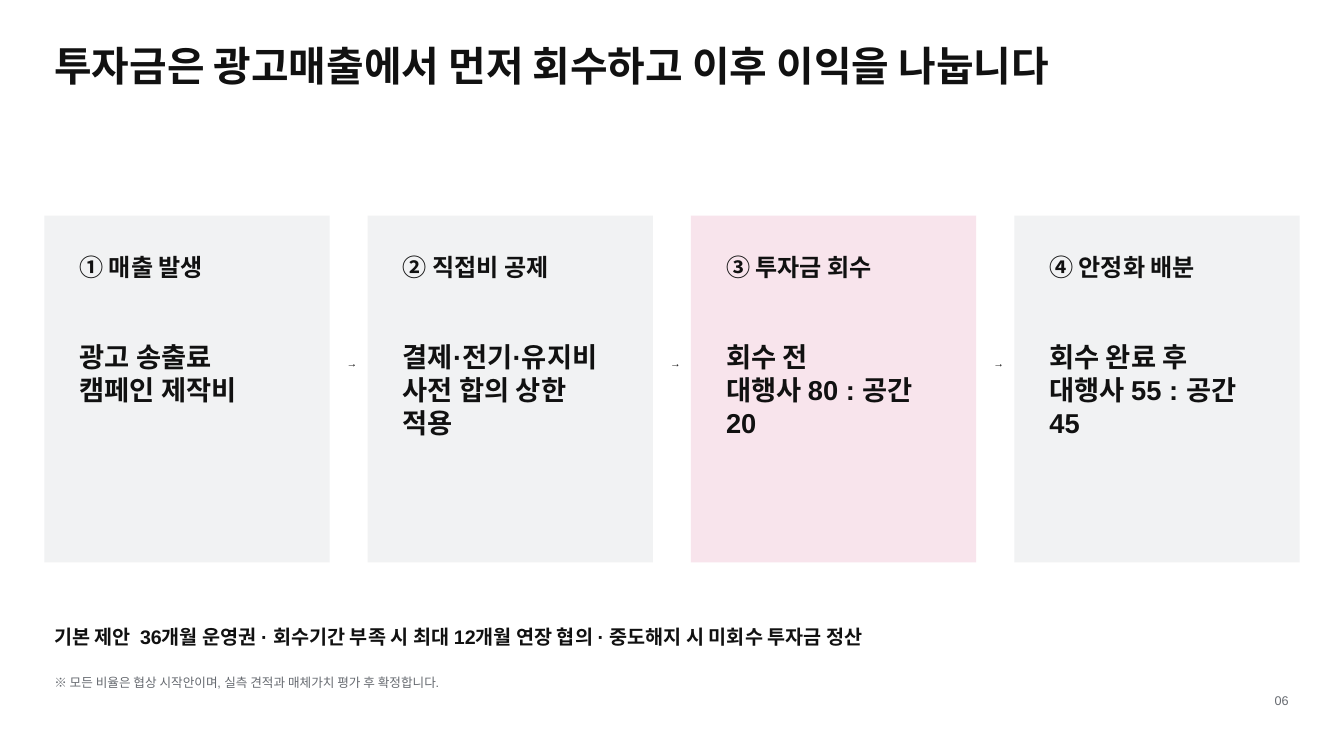
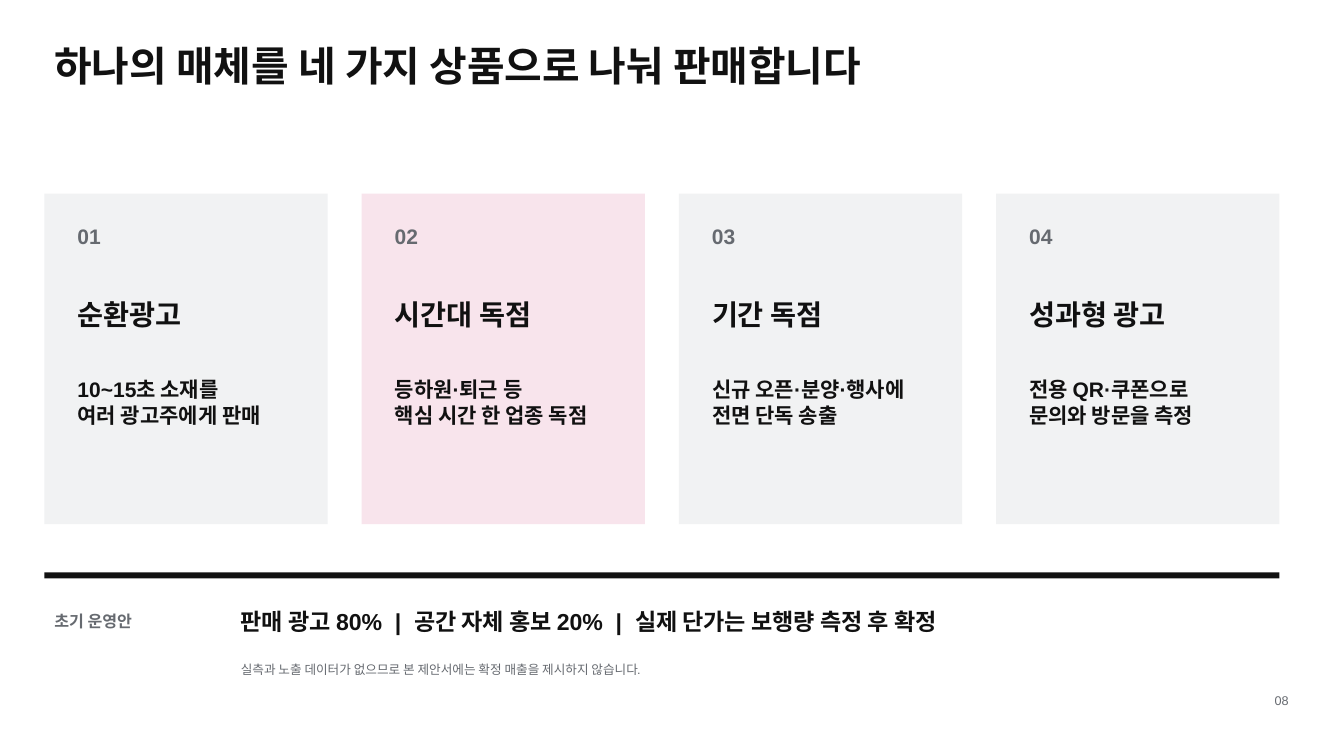
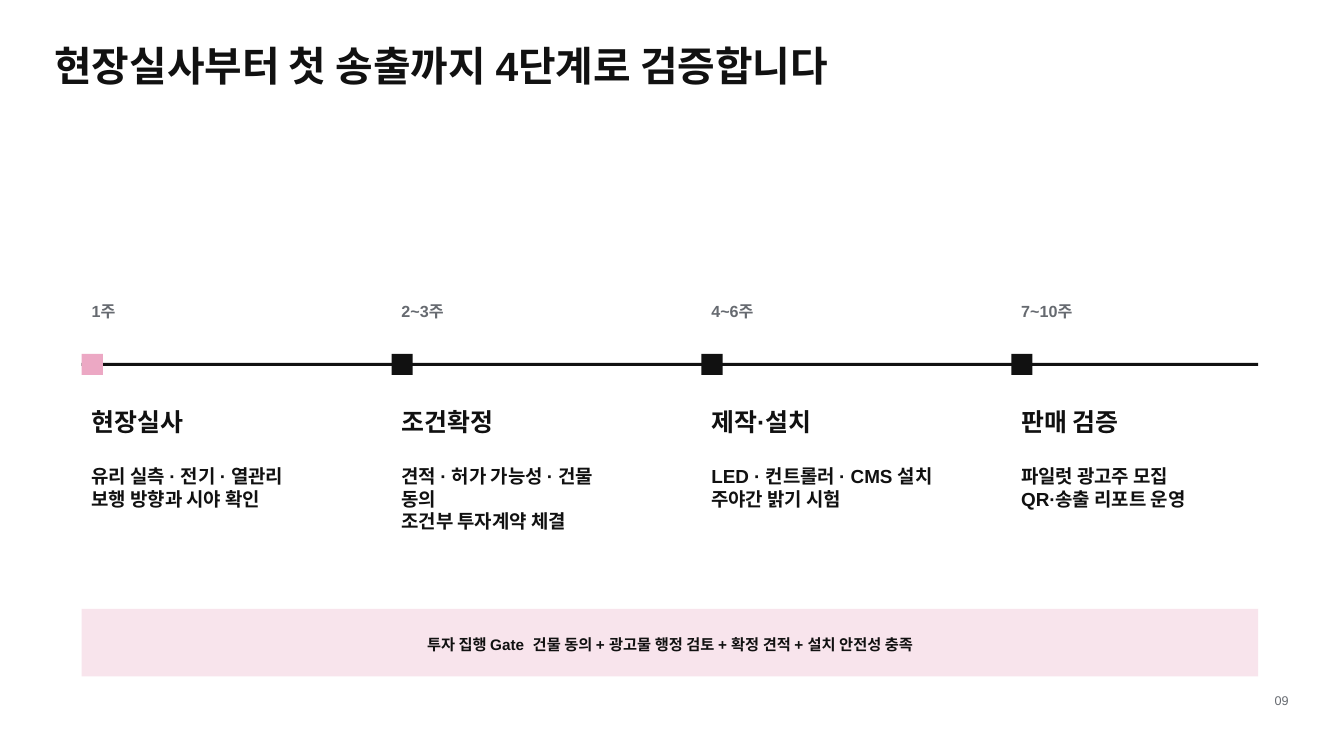
from dataclasses import dataclass

from pptx import Presentation
from pptx.dml.color import RGBColor
from pptx.enum.shapes import MSO_SHAPE
from pptx.enum.text import MSO_ANCHOR, MSO_AUTO_SIZE, PP_ALIGN
from pptx.util import Inches, Pt

RECTANGLE = MSO_SHAPE.RECTANGLE
LEFT, CENTER, RIGHT = PP_ALIGN.LEFT, PP_ALIGN.CENTER, PP_ALIGN.RIGHT
TITLE_ONLY = 5


@dataclass(frozen=True)
class Theme:
    font: str = "Arial"
    # Colours
    ink: str = "111111"
    muted: str = "666A70"
    card: str = "F1F2F3"
    blush: str = "F8E4EC"
    pink: str = "ECA8C4"
    # Type sizes
    title: float = 29.2
    product_name: float = 20.2
    flow_body: float = 19.5
    step_name: float = 17.8
    flow_heading: float = 17.2
    policy: float = 16.5
    product_body: float = 15
    terms: float = 14
    step_body: float = 13.5
    label: float = 11.5
    gate: float = 10.9
    note: float = 9
    arrow: float = 7.6
    # Shared left margin
    margin: float = 0.44


THEME = Theme()


def columns(left, right, width, count):
    """Left edges of equally spaced columns between two outer edges."""
    step = (right - left - width) / (count - 1)
    return [left + index * step for index in range(count)]


class Deck:
    def __init__(self):
        self.presentation = Presentation()
        self.presentation.slide_width = Inches(13.33)
        self.presentation.slide_height = Inches(7.5)
        self.slide = None

    def format_text(self, shape, text, size, color, bold, align):
        frame = shape.text_frame
        frame.word_wrap = True
        frame.auto_size = MSO_AUTO_SIZE.NONE
        frame.vertical_anchor = MSO_ANCHOR.TOP
        frame.text = text
        for paragraph in frame.paragraphs:
            paragraph.alignment = align
            for run in paragraph.runs:
                run.font.name = THEME.font
                run.font.size = Pt(size)
                run.font.bold = bold
                run.font.color.rgb = RGBColor.from_string(color)

    def add_slide(self, title, number):
        layout = self.presentation.slide_layouts[TITLE_ONLY]
        self.slide = self.presentation.slides.add_slide(layout)
        shape = self.slide.shapes.title
        shape.left, shape.top = Inches(THEME.margin), Inches(0.35)
        shape.width, shape.height = Inches(11.67), Inches(0.73)
        self.format_text(shape, title, THEME.title, THEME.ink, True, LEFT)
        self.text(number, 12.34, 6.82, 0.54, 0.25, THEME.note,
                  THEME.muted, bold=False, align=RIGHT)

    def text(self, text, left, top, width, height, size,
             color=THEME.ink, bold=True, align=LEFT):
        box = self.slide.shapes.add_textbox(
            Inches(left), Inches(top), Inches(width), Inches(height))
        self.format_text(box, text, size, color, bold, align)

    def panel(self, left, top, width, height, color):
        shape = self.slide.shapes.add_shape(
            RECTANGLE, Inches(left), Inches(top), Inches(width), Inches(height))
        shape.shadow.inherit = False
        shape.fill.solid()
        shape.fill.fore_color.rgb = RGBColor.from_string(color)
        shape.line.fill.background()


def add_recovery_flow(deck):
    deck.add_slide("투자금은 광고매출에서 먼저 회수하고 이후 이익을 나눕니다", "06")
    stages = [
        ("① 매출 발생", "광고 송출료\n캠페인 제작비", THEME.card),
        ("② 직접비 공제", "결제·전기·유지비\n사전 합의 상한 적용", THEME.card),
        ("③ 투자금 회수", "회수 전\n대행사 80 : 공간 20", THEME.blush),
        ("④ 안정화 배분", "회수 완료 후\n대행사 55 : 공간 45", THEME.card),
    ]
    width, padding = 2.83, 0.25
    text_width = width - 2 * padding
    lefts = columns(THEME.margin, 12.89, width, len(stages))
    for left, (heading, body, color) in zip(lefts, stages):
        deck.panel(left, 2.14, width, 3.44, color)
        deck.text(heading, left + padding, 2.46, text_width, 0.44, THEME.flow_heading)
        deck.text(body, left + padding, 3.33, text_width, 1.33, THEME.flow_body)

    # Arrows in the gaps between cards
    for left in lefts[:-1]:
        deck.text("→", left + width + 0.07, 3.49, 0.29, 0.38, THEME.arrow, align=CENTER)

    # Terms
    deck.text("기본 제안  36개월 운영권 · 회수기간 부족 시 최대 12개월 연장 협의 · "
              "중도해지 시 미회수 투자금 정산",
              THEME.margin, 6.15, 12.46, 0.33, THEME.terms)
    deck.text("※ 모든 비율은 협상 시작안이며, 실측 견적과 매체가치 평가 후 확정합니다.",
              THEME.margin, 6.65, 9.38, 0.25, THEME.note, THEME.muted, bold=False)


def add_products(deck):
    deck.add_slide("하나의 매체를 네 가지 상품으로 나눠 판매합니다", "08")
    products = [
        ("01", "순환광고", "10~15초 소재를\n여러 광고주에게 판매", THEME.card),
        ("02", "시간대 독점", "등하원·퇴근 등\n핵심 시간 한 업종 독점", THEME.blush),
        ("03", "기간 독점", "신규 오픈·분양·행사에\n전면 단독 송출", THEME.card),
        ("04", "성과형 광고", "전용 QR·쿠폰으로\n문의와 방문을 측정", THEME.card),
    ]
    width, padding = 2.81, 0.23
    text_width = width - 2 * padding
    lefts = columns(THEME.margin, 12.69, width, len(products))
    for left, (number, name, body, color) in zip(lefts, products):
        deck.panel(left, 1.92, width, 3.28, color)
        text_left = left + padding
        deck.text(number, text_left, 2.17, 0.54, 0.35, THEME.product_body, THEME.muted)
        deck.text(name, text_left, 2.9, text_width, 0.44, THEME.product_name)
        deck.text(body, text_left, 3.69, text_width, 0.88, THEME.product_body)

    # Operating policy below the rule
    deck.panel(THEME.margin, 5.68, 12.25, 0.06, THEME.ink)
    deck.text("초기 운영안", THEME.margin, 6.02, 1.67, 0.29, THEME.label, THEME.muted)
    deck.text("판매 광고 80%  |  공간 자체 홍보 20%  |  실제 단가는 보행량 측정 후 확정",
              2.29, 5.98, 9.38, 0.38, THEME.policy)
    deck.text("실측과 노출 데이터가 없으므로 본 제안서에는 확정 매출을 제시하지 않습니다.",
              2.29, 6.52, 9.17, 0.25, THEME.note, THEME.muted, bold=False)


def add_timeline(deck):
    deck.add_slide("현장실사부터 첫 송출까지 4단계로 검증합니다", "09")
    steps = [
        ("1주", "현장실사", "유리 실측 · 전기 · 열관리\n보행 방향과 시야 확인", THEME.pink),
        ("2~3주", "조건확정", "견적 · 허가 가능성 · 건물 동의\n조건부 투자계약 체결", THEME.ink),
        ("4~6주", "제작·설치", "LED · 컨트롤러 · CMS 설치\n주야간 밝기 시험", THEME.ink),
        ("7~10주", "판매 검증", "파일럿 광고주 모집\nQR·송출 리포트 운영", THEME.ink),
    ]
    start, length, width, marker = 0.81, 11.67, 2.45, 0.21
    deck.panel(start, 3.6, length, 0.03, THEME.ink)
    lefts = columns(start, start + length, width, len(steps))
    for left, (weeks, name, body, color) in zip(lefts, steps):
        deck.panel(left, 3.51, marker, marker, color)
        deck.text(weeks, left, 2.94, 1.15, 0.29, THEME.label, THEME.muted)
        deck.text(name, left, 3.98, width, 0.4, THEME.step_name)
        deck.text(body, left, 4.56, width, 0.89, THEME.step_body)

    # Investment gate
    deck.panel(start, 6.04, length, 0.67, THEME.blush)
    deck.text("투자 집행 Gate  건물 동의 + 광고물 행정 검토 + 확정 견적 + 설치 안전성 충족",
              1.07, 6.25, 11.15, 0.28, THEME.gate, align=CENTER)


def main():
    deck = Deck()
    add_recovery_flow(deck)
    add_products(deck)
    add_timeline(deck)
    deck.presentation.save("out.pptx")


if __name__ == "__main__":
    main()
